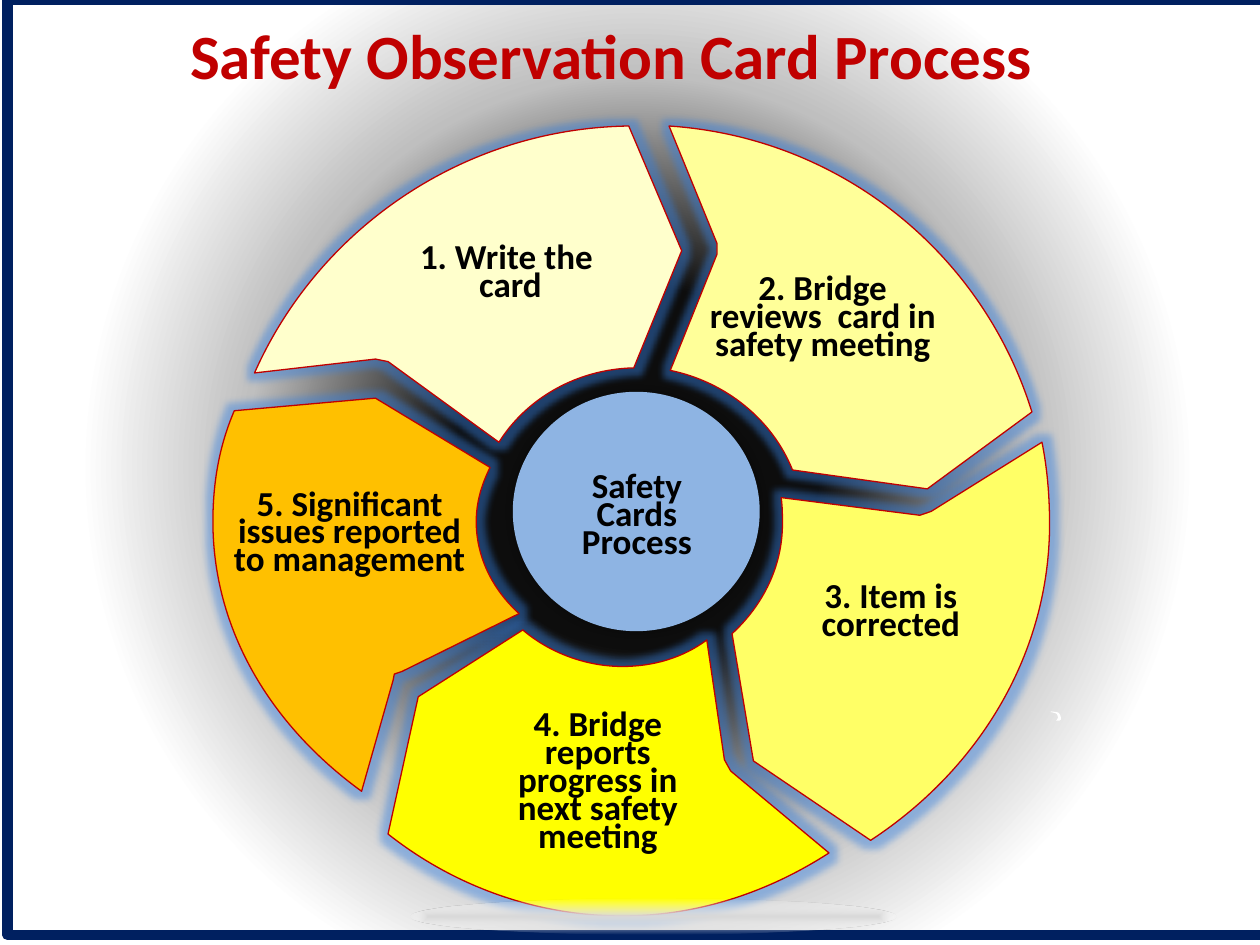
from dataclasses import dataclass

from lxml import etree
from pptx import Presentation
from pptx.dml.color import RGBColor
from pptx.enum.shapes import MSO_SHAPE
from pptx.enum.text import MSO_ANCHOR, PP_ALIGN
from pptx.oxml.ns import qn
from pptx.util import Cm, Pt

RECT, OVAL = MSO_SHAPE.RECTANGLE, MSO_SHAPE.OVAL
TOP, MID = MSO_ANCHOR.TOP, MSO_ANCHOR.MIDDLE
LEFT, CENTER = PP_ALIGN.LEFT, PP_ALIGN.CENTER
FONT = "Calibri"

NAVY = RGBColor(0x00, 0x20, 0x60)
RED = RGBColor(0xC0, 0x00, 0x00)
BLACK = RGBColor(0x00, 0x00, 0x00)
WHITE = RGBColor(0xFF, 0xFF, 0xFF)
BLUE = RGBColor(0x8E, 0xB4, 0xE3)
GLOW = RGBColor(0x36, 0x80, 0xE0)
COAL = RGBColor(0x0D, 0x0D, 0x0D)
GREY = RGBColor(0xBF, 0xBF, 0xBF)
PALE = RGBColor(0xD9, 0xD9, 0xD9)
CREAM = RGBColor(0xFF, 0xFF, 0xCC)
STRAW = RGBColor(0xFF, 0xFF, 0x99)
LEMON = RGBColor(0xFF, 0xFF, 0x66)
YELLOW = RGBColor(0xFF, 0xFF, 0x00)
AMBER = RGBColor(0xFF, 0xC0, 0x00)


@dataclass
class Wedge:
    """A ring part; each move is a line (2 numbers) or a curve (6)."""
    fill: RGBColor
    moves: list[tuple]


@dataclass
class Label:
    text: str
    box: tuple


WEDGES = [
    Wedge(CREAM, [(3.96, 3.51), (4.18, 3.16, 4.58, 2.93, 5.03, 2.92),
                  (5.41, 1.99), (4.99, 1), (3.66, 1.02, 2.52, 1.83, 2.02, 2.96),
                  (2.98, 2.85), (3.08, 2.87)]),
    Wedge(AMBER, [(4.12, 4.87), (3.9, 4.67, 3.78, 4.41, 3.78, 4.14),
                  (3.78, 3.99, 3.82, 3.85, 3.89, 3.71), (2.98, 3.16),
                  (1.86, 3.26), (1.74, 3.54, 1.69, 3.83, 1.69, 4.14),
                  (1.69, 4.99, 2.14, 5.75, 2.87, 6.28), (3.12, 5.4),
                  (3.13, 5.35), (3.19, 5.33)]),
    Wedge(YELLOW, [(5.61, 5.08), (5.42, 5.22, 5.19, 5.29, 4.94, 5.29),
                   (4.65, 5.29, 4.36, 5.18, 4.15, 5), (3.32, 5.53),
                   (3.08, 6.62), (3.6, 7.03, 4.25, 7.27, 4.94, 7.27),
                   (5.54, 7.27, 6.1, 7.08, 6.58, 6.77), (5.8, 6.12),
                   (5.75, 6.03)]),
    Wedge(LEMON, [(6.2, 3.95), (6.21, 4.02, 6.21, 4.09, 6.21, 4.16),
                  (6.21, 4.49, 6.06, 4.8, 5.81, 5.03), (5.98, 6.04),
                  (6.91, 6.67), (7.78, 6.1, 8.33, 5.18, 8.33, 4.16),
                  (8.33, 3.93, 8.31, 3.71, 8.27, 3.51), (7.39, 4.06),
                  (7.3, 4.09)]),
    Wedge(STRAW, [(5.32, 2.94), (5.76, 3.03, 6.13, 3.33, 6.29, 3.73),
                  (7.36, 3.88), (8.19, 3.27), (7.8, 2.01, 6.67, 1.09, 5.31, 1),
                  (5.69, 1.93), (5.69, 2.02)]),
]
HOOK = [(8.4, 5.72), (8.4, 5.72, 8.42, 5.72, 8.42, 5.71),
        (8.42, 5.7, 8.42, 5.65, 8.38, 5.65),
        (8.34, 5.65, 8.34, 5.64, 8.34, 5.65),
        (8.33, 5.65, 8.33, 5.65, 8.33, 5.65),
        (8.33, 5.65, 8.39, 5.66, 8.39, 5.67),
        (8.4, 5.69, 8.4, 5.7, 8.39, 5.71),
        (8.39, 5.71, 8.38, 5.72, 8.38, 5.72)]
LABELS = [
    Label("Safety Cards Process", (4.37, 3.74, 1.37, 0.83)),
    Label("1. Write the\n card", (3.02, 1.92, 2, 0.59)),
    Label("2. Bridge reviews  card in safety meeting", (5.5, 2.17, 2.06, 1.07)),
    Label("3. Item is corrected", (6.3, 4.61, 1.54, 0.61)),
    Label("4. Bridge reports progress in next safety meeting",
          (3.81, 5.63, 1.87, 1.36)),
    Label("5. Significant issues reported to management",
          (1.74, 3.88, 2.07, 1.07)),
]


def size(val: float) -> Cm:
    """Turn inches into a length."""
    return Cm(val * 2.54)


def paint(shape, fill: RGBColor, line: RGBColor | None = None,
          width: float = 0.75) -> None:
    shape.shadow.inherit = False
    shape.fill.solid()
    shape.fill.fore_color.rgb = fill
    if line is None:
        shape.line.fill.background()
    else:
        shape.line.color.rgb = line
        shape.line.width = Pt(width)


def add_tag(root, tag: str, **attrs):
    return etree.SubElement(root, qn(tag), attrs)


def add_color(root, color: RGBColor, alpha: int) -> None:
    node = add_tag(root, "a:srgbClr", val=str(color))
    if alpha < 100:
        add_tag(node, "a:alpha", val=str(alpha * 1000))


def add_effect(shape, tag: str, color: RGBColor, alpha: int, **attrs) -> None:
    root = shape._element.spPr.find(qn("a:effectLst"))
    add_color(add_tag(root, tag, **attrs), color, alpha)


def shade(shape, kind: str, stops: list[tuple]) -> None:
    """Swap the solid fill for a gradient spreading from the centre."""
    old = shape._element.spPr.find(qn("a:solidFill"))
    grad = etree.Element(qn("a:gradFill"), rotWithShape="1")
    stop_list = add_tag(grad, "a:gsLst")
    for pos, color, alpha in stops:
        add_color(add_tag(stop_list, "a:gs", pos=str(pos * 1000)), color, alpha)
    way = add_tag(grad, "a:path", path=kind)
    add_tag(way, "a:fillToRect", **dict.fromkeys("ltrb", "50000"))
    old.getparent().replace(old, grad)


def add_form(slide, moves: list[tuple]):
    """Join the end points with lines, then bend those that are curves."""
    ends = [(size(move[-2]), size(move[-1])) for move in moves]
    pen = slide.shapes.build_freeform(*ends[0], scale=1.0)
    pen.add_line_segments(ends[1:], close=True)
    form = pen.convert_to_shape()
    lines = list(form._element.spPr.iter(qn("a:lnTo")))
    for move, line in zip(moves[1:], lines):
        if len(move) == 6:
            bend = etree.Element(qn("a:cubicBezTo"))
            for x, y in zip(move[::2], move[1::2]):
                add_tag(bend, "a:pt", x=str(size(x) - form.left),
                        y=str(size(y) - form.top))
            line.getparent().replace(line, bend)
    return form


def add_shape(slide, kind, box: tuple, fill: RGBColor, *line):
    shape = slide.shapes.add_shape(kind, *map(size, box))
    paint(shape, fill, *line)
    return shape


def write(shape, text: str, points: int, color: RGBColor, align, anchor) -> None:
    frame = shape.text_frame
    frame.text = text
    frame.word_wrap = True
    frame.vertical_anchor = anchor
    for para in frame.paragraphs:
        para.alignment = align
        for run in para.runs:
            font = run.font
            font.name, font.size, font.bold = FONT, Pt(points), True
            font.color.rgb = color


def add_label(slide, label: Label) -> None:
    box = slide.shapes.add_textbox(*map(size, label.box))
    write(box, label.text, 20, BLACK, CENTER, TOP)
    for para in box.text_frame.paragraphs:
        para.line_spacing = Pt(16)


def main() -> None:
    deck = Presentation()
    deck.slide_width, deck.slide_height = size(10), size(7.5)
    slide = deck.slides.add_slide(deck.slide_layouts[5])

    frame = add_shape(slide, RECT, (0.06, 0, 10, 7.42), WHITE, NAVY, 6)
    shade(frame, "circle", [(23, COAL, 100), (50, GREY, 100), (71, WHITE, 100)])

    title = slide.shapes.title
    title.left, title.top, title.width, title.height = map(
        size, (1.41, 0.08, 7.07, 0.71))
    write(title, "Safety Observation Card Process", 36, RED, LEFT, MID)
    frame._element.addnext(title._element)

    for wedge in WEDGES:
        form = add_form(slide, wedge.moves)
        paint(form, wedge.fill, RED)
        add_effect(form, "a:glow", GLOW, 45, rad=str(Pt(8)))

    hub = add_shape(slide, OVAL, (4.07, 3.11, 1.96, 1.9), BLUE)
    add_effect(hub, "a:outerShdw", BLACK, 40, blurRad=str(Pt(5)))
    base = add_shape(slide, OVAL, (3.26, 7.13, 3.85, 0.29), PALE)
    shade(base, "shape", [(0, PALE, 100), (100, WHITE, 0)])

    for label in LABELS:
        add_label(slide, label)
    paint(add_form(slide, HOOK), WHITE)
    deck.save("out.pptx")


if __name__ == "__main__":
    main()
